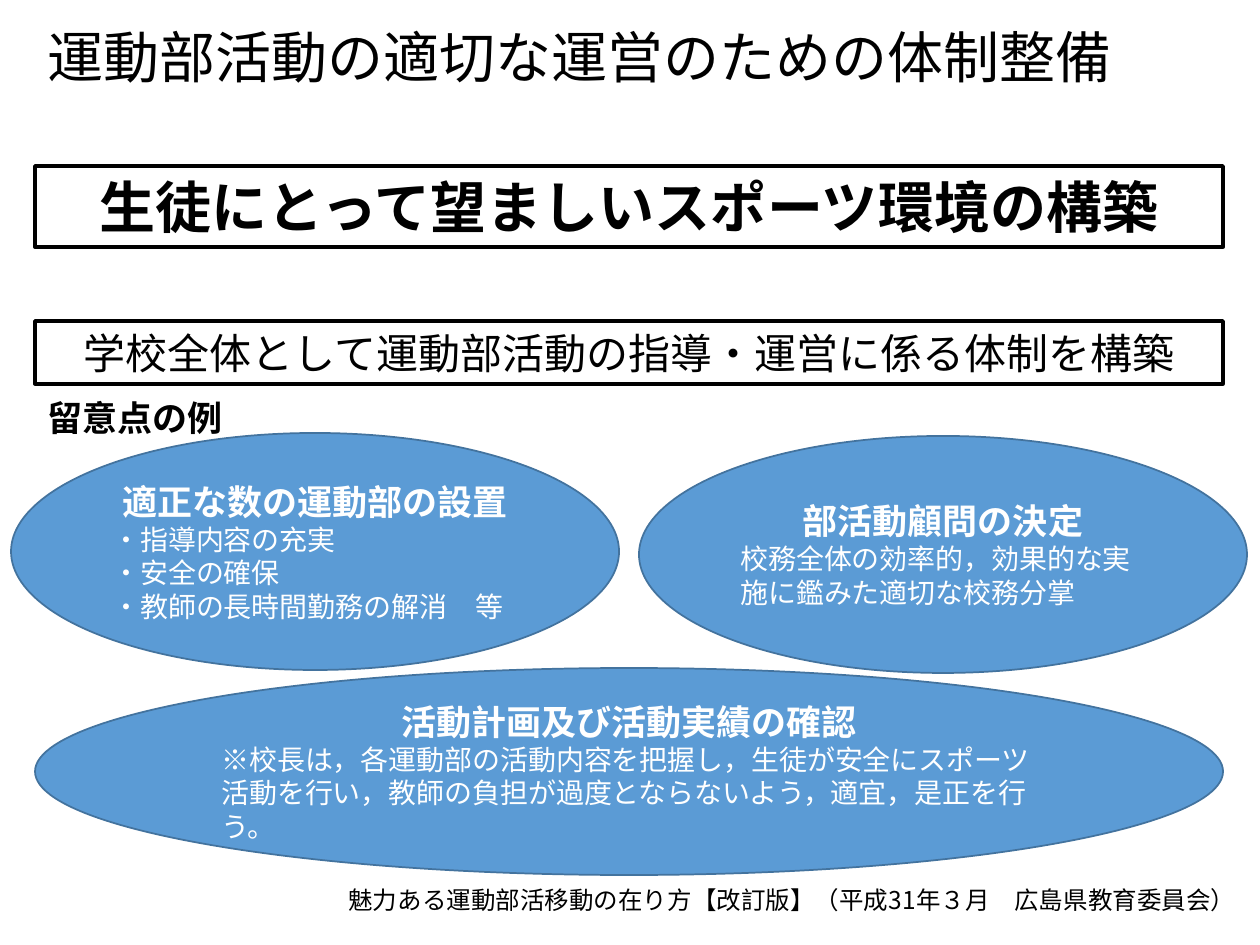
from pptx import Presentation
from pptx.dml.color import RGBColor
from pptx.enum.shapes import MSO_SHAPE as Shape
from pptx.enum.text import MSO_ANCHOR as Anchor, MSO_AUTO_SIZE as AutoSize, PP_ALIGN as Align
from pptx.oxml.ns import qn
from pptx.util import Emu, Pt
from lxml import etree

SCALE = 914400 / 126  # EMU in one px
BLACK = RGBColor(0x00, 0x00, 0x00)
WHITE = RGBColor(0xFF, 0xFF, 0xFF)
BLUE = RGBColor(0x5B, 0x9B, 0xD5)
DARK_BLUE = RGBColor(0x43, 0x73, 0x9E)
GOTHIC = "Noto Sans CJK JP"
LEFT, WIDTH = 35, 1188  # shared by the full-width parts


def px(*lengths):
    return [Emu(round(length * SCALE)) for length in lengths]


def format_para(para, size, font, color, bold=False, align=Align.LEFT):
    para.alignment = align
    para.space_before = Pt(0)
    for span in para.runs:
        span.font.size = Pt(size)
        span.font.name = font
        span.font.bold = bold
        span.font.color.rgb = color
        # Japanese characters take the East Asian typeface
        east_asian = etree.Element(qn("a:ea"), typeface=font)
        span.font._element.find(qn("a:latin")).addnext(east_asian)


deck = Presentation()
deck.slide_width, deck.slide_height = px(1260, 945)
page = deck.slides.add_slide(deck.slide_layouts[5])

# Title
title = page.shapes.title
title.left, title.top, title.width, title.height = px(LEFT, 16, 1154, 81)
frame = title.text_frame
frame.text = "運動部活動の適切な運営のための体制整備"
frame.auto_size = AutoSize.NONE
frame.vertical_anchor = Anchor.TOP
format_para(frame.paragraphs[0], 32, GOTHIC, BLACK)

# Framed statements
for top, height, text, size, bold in [
    (166, 81, "生徒にとって望ましいスポーツ環境の構築", 32, True),
    (321, 63, "学校全体として運動部活動の指導・運営に係る体制を構築", 24, False),
]:
    box = page.shapes.add_shape(Shape.RECTANGLE, *px(LEFT, top, WIDTH, height))
    box.shadow.inherit = False
    box.fill.background()
    box.line.color.rgb = BLACK
    box.line.width = Pt(2)
    frame = box.text_frame
    frame.text = text
    frame.word_wrap = True
    frame.vertical_anchor = Anchor.TOP
    format_para(frame.paragraphs[0], size, GOTHIC, BLACK, bold, Align.CENTER)

# Ellipses: a heading and its details
for left, top, width, height, heading, details in [
    (11, 433, 608, 237, "適正な数の運動部の設置",
     ["・指導内容の充実", "・安全の確保", "・教師の長時間勤務の解消　等"]),
    (639, 436, 608, 237, "部活動顧問の決定",
     ["校務全体の効率的，効果的な実施に鑑みた適切な校務分掌"]),
    (LEFT, 668, WIDTH, 207, "活動計画及び活動実績の確認",
     ["※校長は，各運動部の活動内容を把握し，生徒が安全にスポーツ活動を行い，"
      "教師の負担が過度とならないよう，適宜，是正を行う。"]),
]:
    ellipse = page.shapes.add_shape(Shape.OVAL, *px(left, top, width, height))
    ellipse.shadow.inherit = False
    ellipse.fill.solid()
    ellipse.fill.fore_color.rgb = BLUE
    ellipse.line.color.rgb = DARK_BLUE
    ellipse.line.width = Pt(1)
    frame = ellipse.text_frame
    frame.text = "\n".join([heading, *details])
    frame.word_wrap = True
    frame.vertical_anchor = Anchor.MIDDLE
    format_para(frame.paragraphs[0], 20, "Calibri", WHITE, True, Align.CENTER)
    for para in frame.paragraphs[1:]:
        format_para(para, 16, "Calibri", WHITE)

# Source line and the label above the ellipses
for left, top, width, height, text, size, bold, align in [
    (60, 858, WIDTH, 84, "魅力ある運動部活移動の在り方【改訂版】（平成31年３月　広島県教育委員会）",
     14, False, Align.RIGHT),
    (LEFT, 398, 222, 40, "留意点の例", 20, True, Align.LEFT),
]:
    box = page.shapes.add_textbox(*px(left, top, width, height))
    frame = box.text_frame
    frame.text = text
    frame.word_wrap = True
    frame.vertical_anchor = Anchor.MIDDLE
    format_para(frame.paragraphs[0], size, GOTHIC, BLACK, bold, align)

deck.save("out.pptx")
